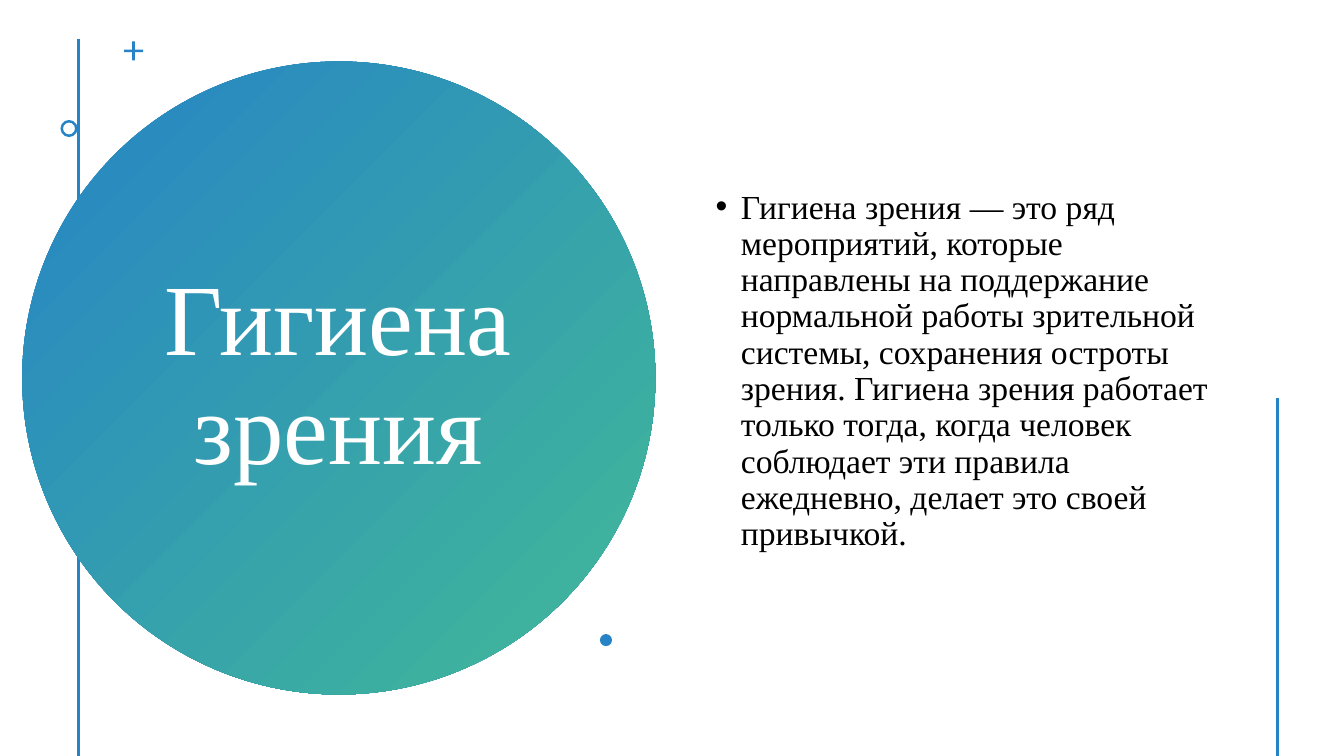
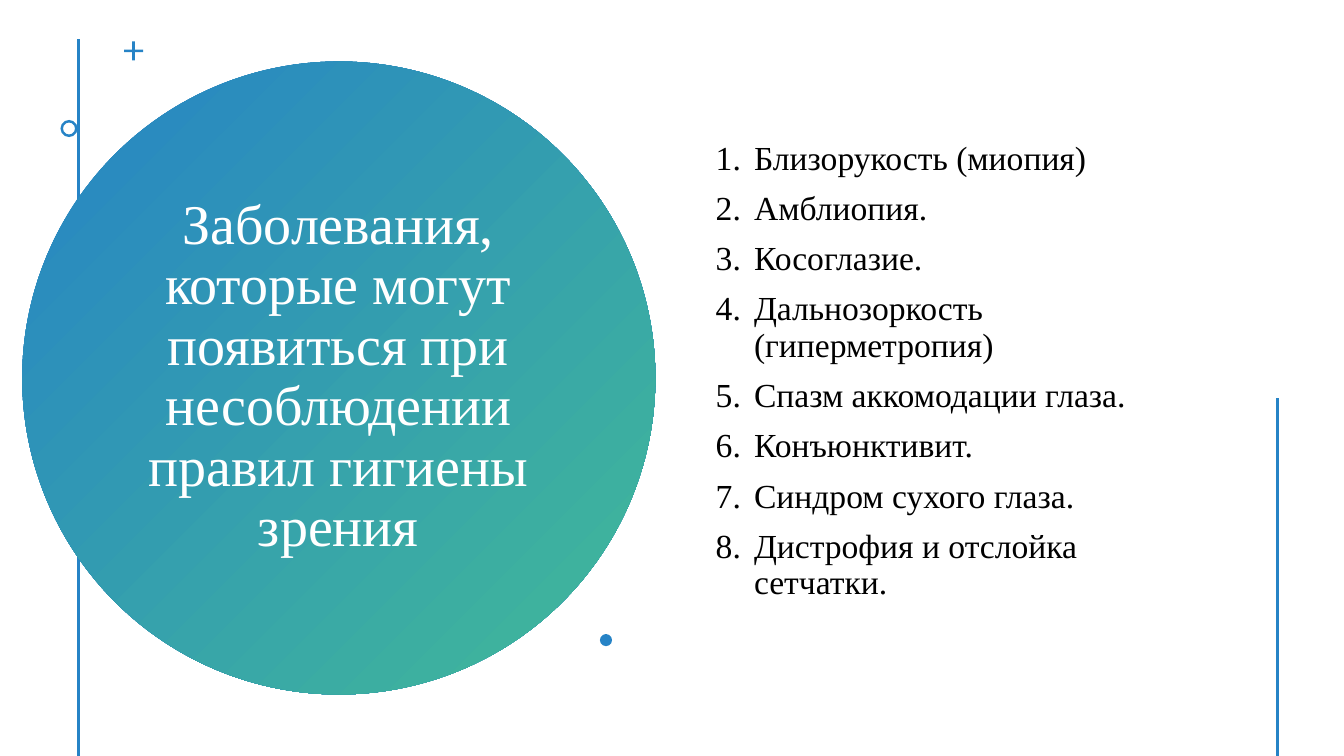
import pptx
import pptx.util
import pptx.dml.color
import pptx.enum.shapes
import pptx.enum.text
import pptx.oxml.ns
import lxml.etree

Inches, Pt = pptx.util.Inches, pptx.util.Pt
RGBColor = pptx.dml.color.RGBColor
SHAPE = pptx.enum.shapes.MSO_SHAPE
ALIGN = pptx.enum.text.PP_ALIGN
qn = pptx.oxml.ns.qn

# Content
SLIDES = [
    {
        "title": "Гигиена зрения",
        "title_size": 72,
        "bullet": ("buChar", {"char": "•"}),
        "indent": 0.25,
        "items": [
            "Гигиена зрения — это ряд мероприятий, которые направлены на "
            "поддержание нормальной работы зрительной системы, сохранения "
            "остроты зрения. Гигиена зрения работает только тогда, когда "
            "человек соблюдает эти правила ежедневно, делает это своей "
            "привычкой.",
        ],
    },
    {
        "title": "Заболевания, которые могут появиться при несоблюдении "
                 "правил гигиены зрения",
        "title_size": 40,
        "bullet": ("buAutoNum", {"type": "arabicPeriod"}),
        "indent": 0.38,
        "items": [
            "Близорукость (миопия)",
            "Амблиопия.",
            "Косоглазие.",
            "Дальнозоркость (гиперметропия)",
            "Спазм аккомодации глаза.",
            "Конъюнктивит.",
            "Синдром сухого глаза.",
            "Дистрофия и отслойка сетчатки.",
        ],
    },
]

# Shared style
BLUE = RGBColor(0x26, 0x83, 0xC6)
GREEN = RGBColor(0x42, 0xBA, 0x97)
WHITE = RGBColor(0xFF, 0xFF, 0xFF)
BLACK = RGBColor(0x00, 0x00, 0x00)
FONT = "Times New Roman"
BODY_SIZE = 24
LINE_BOTTOM = 7.5
TITLE_BOX = (1.36, 1.41, 3.99, 4.67)
BODY_BOX = (7, 0.42, 5.12, 6.53)

# Small marks: preset, left, top, size, adjustment
MARKS = [
    (SHAPE.CROSS, 1.23, 0.41, 0.19, 0.43),
    (SHAPE.DONUT, 0.6, 1.19, 0.17, 0.15),
    (SHAPE.OVAL, 5.95, 6.29, 0.12, None),
]


def add_vertical(s, x, top):
    line = s.shapes.add_connector(
        pptx.enum.shapes.MSO_CONNECTOR.STRAIGHT,
        Inches(x), Inches(top), Inches(x), Inches(LINE_BOTTOM))
    line.line.color.rgb = BLUE
    line.line.width = Pt(2)
    sp_pr = line._element.find(qn("p:spPr"))
    lxml.etree.SubElement(sp_pr, qn("a:effectLst"))


def add_shape(s, preset, left, top, size):
    sp = s.shapes.add_shape(preset, Inches(left), Inches(top),
                            Inches(size), Inches(size))
    sp.shadow.inherit = False
    sp.line.fill.background()
    return sp


def add_decor(s):
    add_vertical(s, 0.78, 0.39)
    # Gradient circle behind the title
    fill = add_shape(s, SHAPE.OVAL, 0.22, 0.61, 6.28).fill
    fill.gradient()
    fill.gradient_angle = 315
    for stop, color in zip(fill.gradient_stops, (BLUE, GREEN)):
        stop.color.rgb = color
    for preset, left, top, size, adj in MARKS:
        sp = add_shape(s, preset, left, top, size)
        sp.fill.solid()
        sp.fill.fore_color.rgb = BLUE
        if adj is not None:
            sp.adjustments[0] = adj
    add_vertical(s, 12.67, 3.95)


def add_bullet(p, bullet, indent):
    p_pr = p._p.get_or_add_pPr()
    p_pr.set("marL", str(Inches(indent)))
    p_pr.set("indent", str(-Inches(indent)))
    tag, attrs = bullet
    if tag == "buChar":
        lxml.etree.SubElement(p_pr, qn("a:buFont"), typeface="Arial")
    lxml.etree.SubElement(p_pr, qn("a:" + tag), attrs)


def add_text(s, box, texts, size, color, align, bullet=None, indent=0):
    tf = s.shapes.add_textbox(*map(Inches, box)).text_frame
    tf.word_wrap = True
    tf.vertical_anchor = pptx.enum.text.MSO_ANCHOR.MIDDLE
    for i, text in enumerate(texts):
        p = tf.add_paragraph() if i else tf.paragraphs[0]
        p.text = text
        if bullet:
            add_bullet(p, bullet, indent)
        p.alignment = align
        p.line_spacing = 0.9
        p.space_before = Pt(10 if i else 0)
        p.font.name = FONT
        p.font.size = Pt(size)
        p.font.color.rgb = color


def main():
    prs = pptx.Presentation()
    prs.slide_width, prs.slide_height = Inches(13.33), Inches(7.5)
    for content in SLIDES:
        s = prs.slides.add_slide(prs.slide_layouts[6])
        add_decor(s)
        add_text(s, TITLE_BOX, [content["title"]], content["title_size"],
                 WHITE, ALIGN.CENTER)
        add_text(s, BODY_BOX, content["items"], BODY_SIZE, BLACK, ALIGN.LEFT,
                 content["bullet"], content["indent"])
    prs.save("out.pptx")


if __name__ == "__main__":
    main()
